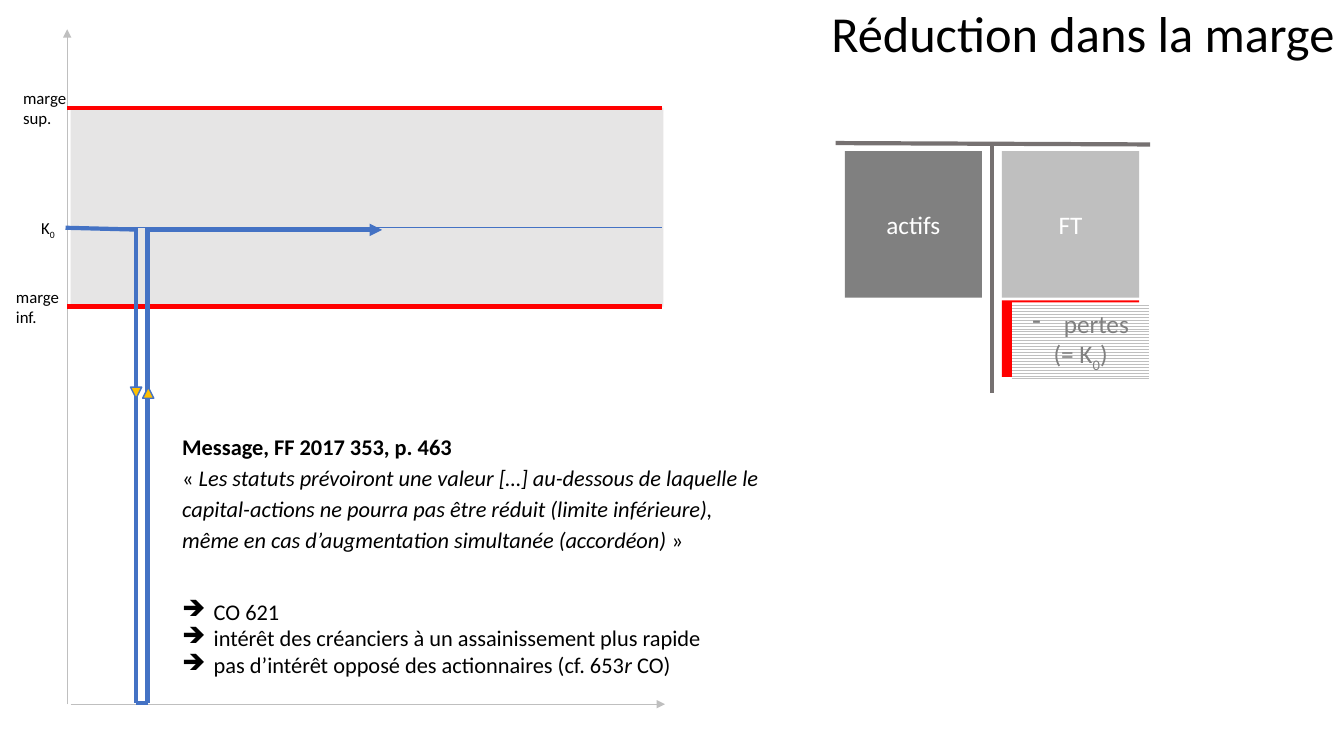
import pptx
import pptx.dml.color
import pptx.enum.dml
import pptx.enum.shapes
import pptx.enum.text
import pptx.oxml.ns
import pptx.util
import lxml.etree

Pt = pptx.util.Pt
Preset = pptx.enum.shapes.MSO_SHAPE
Align = pptx.enum.text.PP_ALIGN
Anchor = pptx.enum.text.MSO_ANCHOR

BLACK, WHITE, RED, BLUE = "000000", "FFFFFF", "FF0000", "4472C4"
LIGHT, MID, DARK, AMBER = "BFBFBF", "808080", "767171", "FFC000"


def rgb(value):
    return pptx.dml.color.RGBColor.from_string(value)


def add_xml(parent, tag, **attributes):
    child = lxml.etree.SubElement(parent, pptx.oxml.ns.qn(tag))
    for key, value in attributes.items():
        child.set(key, str(value))
    return child


class MarginSlide:
    """Draws the elements of the capital margin slide in one style."""

    font = "Calibri"

    def __init__(self, slide):
        self.slide = slide

    def line(self, start, end, color, width, arrow=False):
        connector = self.slide.shapes.add_connector(
            pptx.enum.shapes.MSO_CONNECTOR.STRAIGHT, *map(Pt, start + end))
        connector.line.color.rgb = rgb(color)
        connector.line.width = Pt(width)
        properties = connector._element.spPr
        if arrow:
            add_xml(properties.get_or_add_ln(), "a:tailEnd", type="triangle")
        add_xml(properties, "a:effectLst")

    def shape(self, box, fill, preset=Preset.RECTANGLE, outline=None, alpha=None):
        shape = self.slide.shapes.add_shape(preset, *map(Pt, box))
        shape.shadow.inherit = False
        shape.fill.solid()
        shape.fill.fore_color.rgb = rgb(fill)
        if alpha:
            solid = shape._element.spPr.find(pptx.oxml.ns.qn("a:solidFill"))
            add_xml(solid[0], "a:alpha", val=alpha * 1000)
        if outline:
            shape.line.color.rgb = rgb(outline)
            shape.line.width = Pt(1)
        else:
            shape.line.fill.background()
        return shape

    def block(self, box, fill, paragraphs, color=WHITE, bullets=()):
        block = self.shape(box, fill)
        block.text_frame.vertical_anchor = Anchor.MIDDLE
        self.add_runs(block.text_frame, paragraphs, 18, color, Align.CENTER, bullets=bullets)
        return block

    def text(self, box, paragraphs, size, align=Align.LEFT, wrap=True, spacing=None, bullets=()):
        frame = self.slide.shapes.add_textbox(*map(Pt, box)).text_frame
        frame.word_wrap = wrap
        self.add_runs(frame, paragraphs, size, BLACK, align, spacing, bullets)

    def add_runs(self, frame, paragraphs, size, color, align, spacing=None, bullets=()):
        for index, runs in enumerate(paragraphs):
            paragraph = frame.paragraphs[0] if index == 0 else frame.add_paragraph()
            paragraph.alignment = align
            if spacing:
                paragraph.line_spacing = spacing
            if index < len(bullets):
                properties = paragraph._p.get_or_add_pPr()
                properties.set("marL", str(Pt(22.5)))
                properties.set("indent", str(-Pt(22.5)))
                add_xml(properties, "a:buChar", char=bullets[index])
            for wording, style in runs:
                run = paragraph.add_run()
                run.text = wording
                run.font.name = self.font
                run.font.size = Pt(size)
                run.font.color.rgb = rgb(color)
                run.font.bold = style == "bold"
                run.font.italic = style == "italic"
                if style == "sub":
                    run.font._element.set("baseline", "-25000")


def draw_margin_chart(page):
    left, right, upper, lower, initial, base = 48, 473, 77, 219, 162.7, 503
    page.shape((50.4, upper, 423.4, lower - upper), "D0CECE", alpha=52)
    page.line((left, base), (left, 21), LIGHT, 0.5, arrow=True)
    page.line((50.4, base), (475, base), LIGHT, 0.5, arrow=True)
    for level, color, width in ((lower, RED, 3), (upper, RED, 3), (initial, BLUE, 0.5)):
        page.line((left, level), (right, level), color, width)
    for x, y, place in ((9.4, 59, "sup."), (4.3, 201, "inf.")):
        page.text((x, y, 45.4, 36), [[("marge", "")], [(place, "")]], 12, wrap=False)
    page.text((22.3, 152, 25.2, 21.6), [[("K", ""), ("0", "sub")]], 12, wrap=False)


def draw_accordion(page):
    start, down, up, initial, bottom = 46.8, 97.4, 105.4, 162.7, 502
    page.line((start, initial), (down, 164), BLUE, 3)
    page.line((down, bottom), (up, bottom), BLUE, 3)
    for x in (up, down):
        page.line((x, initial), (x, bottom), BLUE, 3)
    page.line((up, 164.2), (273, 164.2), BLUE, 3, arrow=True)
    for x, rotation in ((101.9, 0), (93.2, 180)):
        marker = page.shape((x, 276.5, 8, 8), AMBER, Preset.ISOSCELES_TRIANGLE, BLUE)
        marker.rotation = rotation


def draw_balance_sheet(page):
    page.line((596.9, 102.2), (821.5, 103.2), DARK, 3)
    page.line((708.5, 103), (708.5, 281), DARK, 3)
    for x, fill, label in ((715.7, LIGHT, "FT"), (603.4, MID, "actifs")):
        page.block((x, 108, 98, 104.6), fill, [[(label, "")]])
    page.shape((715.7, 214.6, 98, 54.7), RED)
    losses = page.block(
        (722.9, 216, 98, 54.7), WHITE,
        [[("pertes", "")], [("(= K", ""), ("0", "sub"), (")", "")]], MID, ["-"])
    losses.fill.patterned()
    losses.fill.pattern = pptx.enum.dml.MSO_PATTERN.ZIG_ZAG
    losses.fill.fore_color.rgb = rgb(LIGHT)
    losses.fill.back_color.rgb = rgb(WHITE)


def add_comments(page):
    page.text((54, 2.9, 906.4, 77), [[("Réduction dans la marge", "")]], 36,
              Align.RIGHT, spacing=0.9)
    page.text((123.1, 423.4, 388.8, 65.5), [
        [("CO 621", "")],
        [("intérêt des créanciers à un assainissement plus rapide", "")],
        [("pas d’intérêt opposé des actionnaires (cf. 653", ""), ("r", "italic"), (" CO)", "")],
    ], 16, wrap=False, bullets="➔➔➔")
    page.text((123.1, 303.1, 434.2, 95), [
        [("Message, FF 2017 353, p. 463", "bold")],
        [("« ", ""),
         ("Les statuts prévoiront une valeur […] au-dessous de laquelle le "
          "capital-actions ne pourra pas être réduit (limite inférieure), "
          "même en cas d’augmentation simultanée (accordéon) ", "italic"),
         ("»", "")],
    ], 16, spacing=1.15)


def main():
    deck = pptx.Presentation()
    deck.slide_width, deck.slide_height = Pt(960), Pt(540)
    page = MarginSlide(deck.slides.add_slide(deck.slide_layouts[6]))
    draw_margin_chart(page)
    draw_balance_sheet(page)
    draw_accordion(page)
    add_comments(page)
    deck.save("out.pptx")


if __name__ == "__main__":
    main()
